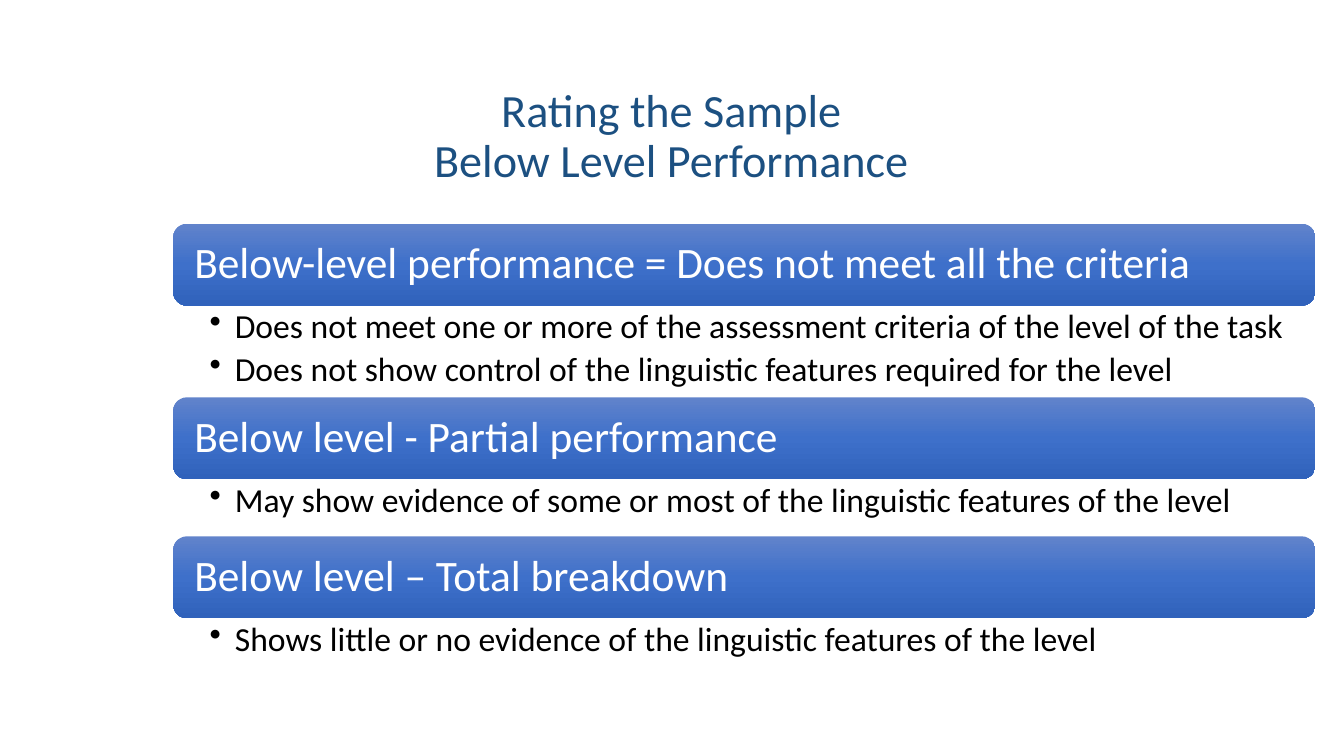
from dataclasses import dataclass

from lxml import etree
from pptx import Presentation
from pptx.dml.color import RGBColor
from pptx.enum.shapes import MSO_SHAPE
from pptx.enum.text import MSO_ANCHOR, MSO_AUTO_SIZE, PP_ALIGN
from pptx.oxml.ns import qn
from pptx.shapes.autoshape import Shape
from pptx.slide import Slide
from pptx.util import Pt

ROUNDED = MSO_SHAPE.ROUNDED_RECTANGLE
MIDDLE, TOP = MSO_ANCHOR.MIDDLE, MSO_ANCHOR.TOP
LEFT, CENTER = PP_ALIGN.LEFT, PP_ALIGN.CENTER
NO_AUTOFIT = MSO_AUTO_SIZE.NONE

COLORS = {
    "title": "1C5081",
    "heading": "FFFFFF",
    "body": "000000",
    "bar_top": "6183CB",
    "bar_middle": "3E70CA",
    "bar_bottom": "3062BB",
}
BAR_STOPS = [(0, "bar_top"), (50, "bar_middle"), (100, "bar_bottom")]
FONT = "Calibri"
SECTION_LEFT, SECTION_TOP, SECTION_WIDTH = 123.8, 159.8, 815.8
BAR_HEIGHT = 58.5
BULLET_INDENT = 18


@dataclass(frozen=True)
class Section:
    heading: str
    bullets: tuple[str, ...]
    body_height: float


SECTIONS = [
    Section(
        "Below-level performance = Does not meet all the criteria",
        (
            "Does not meet one or more of the assessment criteria of the level of the task",
            "Does not show control of the linguistic features required for the level",
        ),
        65.5,
    ),
    Section(
        "Below level - Partial performance",
        ("May show evidence of some or most of the linguistic features of the level",),
        40.8,
    ),
    Section(
        "Below level – Total breakdown",
        ("Shows little or no evidence of the linguistic features of the level",),
        40.8,
    ),
]


def write_text(
    shape: Shape,
    lines: tuple[str, ...],
    *,
    size: float,
    color: str,
    insets: tuple[float, float, float, float],
    anchor: MSO_ANCHOR = MIDDLE,
    align: PP_ALIGN = LEFT,
    space_after: float = 0,
    bulleted: bool = False,
) -> None:
    frame = shape.text_frame
    frame.word_wrap = True
    frame.auto_size = NO_AUTOFIT
    frame.vertical_anchor = anchor
    frame.margin_left, frame.margin_top, frame.margin_right, frame.margin_bottom = map(Pt, insets)
    frame.text = "\n".join(lines)
    for paragraph in frame.paragraphs:
        paragraph.alignment = align
        paragraph.line_spacing = 0.9
        paragraph.space_before = Pt(0)
        paragraph.space_after = Pt(space_after)
        if bulleted:
            properties = paragraph._p.get_or_add_pPr()
            properties.set("marL", str(Pt(BULLET_INDENT)))
            properties.set("indent", str(-Pt(BULLET_INDENT)))
            etree.SubElement(properties, qn("a:buChar"), char="•")
        for run in paragraph.runs:
            run.font.name = FONT
            run.font.size = Pt(size)
            run.font.color.rgb = RGBColor.from_string(COLORS[color])


def fill_bar(bar: Shape) -> None:
    bar.fill.gradient()
    bar.fill.gradient_angle = 270
    stop_list = bar._element.spPr.find(qn("a:gradFill")).find(qn("a:gsLst"))
    for stop in list(stop_list):
        stop_list.remove(stop)
    for percent, color in BAR_STOPS:
        stop = etree.SubElement(stop_list, qn("a:gs"), pos=str(percent * 1000))
        etree.SubElement(stop, qn("a:srgbClr"), val=COLORS[color])


def draw_title(slide: Slide) -> None:
    title = slide.shapes.title
    title.left, title.top, title.width, title.height = map(Pt, (70.6, 23, 817.9, 115.2))
    write_text(
        title,
        ("Rating the Sample\vBelow Level Performance",),
        size=33,
        color="title",
        insets=(7.2, 39, 7.2, 3.6),
        align=CENTER,
    )


def draw_section(slide: Slide, section: Section, top: float) -> None:
    bar = slide.shapes.add_shape(
        ROUNDED, Pt(SECTION_LEFT), Pt(top), Pt(SECTION_WIDTH), Pt(BAR_HEIGHT)
    )
    bar.shadow.inherit = False
    bar.line.fill.background()
    fill_bar(bar)
    write_text(bar, (section.heading,), size=31, color="heading", insets=(12.2, 9, 12.2, 9))

    body = slide.shapes.add_textbox(
        Pt(SECTION_LEFT), Pt(top + BAR_HEIGHT), Pt(SECTION_WIDTH), Pt(section.body_height)
    )
    write_text(
        body,
        section.bullets,
        size=24,
        color="body",
        insets=(26, 2.9, 17.3, 2.9),
        anchor=TOP,
        space_after=4.8,
        bulleted=True,
    )


def main() -> None:
    presentation = Presentation()
    presentation.slide_width, presentation.slide_height = Pt(960), Pt(540)
    slide = presentation.slides.add_slide(presentation.slide_layouts[5])
    draw_title(slide)
    top = SECTION_TOP
    for section in SECTIONS:
        draw_section(slide, section, top)
        top += BAR_HEIGHT + section.body_height
    presentation.save("out.pptx")


if __name__ == "__main__":
    main()
